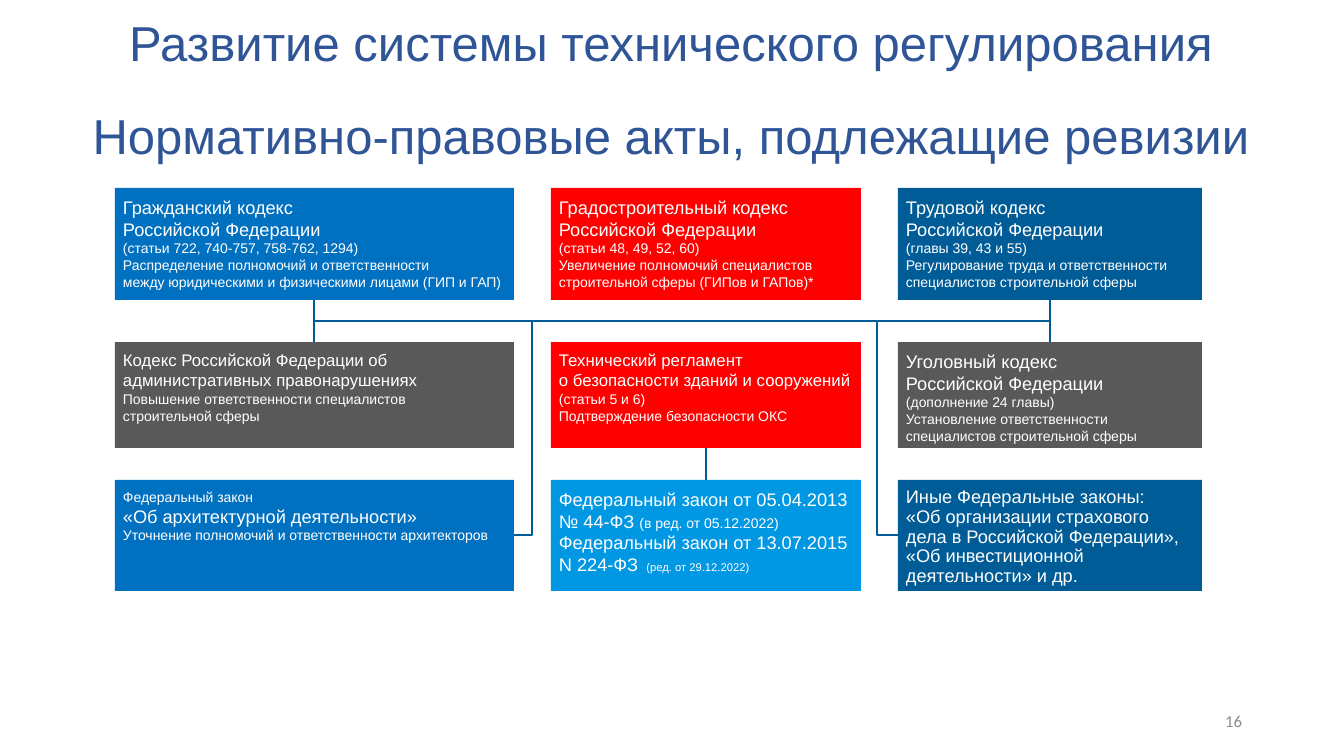
"""Build the slide on legal acts subject to revision."""
from lxml.etree import SubElement
from pptx import Presentation
from pptx.dml.color import RGBColor
from pptx.enum.shapes import MSO_CONNECTOR as CONN, MSO_SHAPE as SHAPE
from pptx.enum.text import MSO_ANCHOR as ANCHOR, PP_ALIGN as ALIGN
from pptx.oxml.ns import qn
from pptx.util import Pt

PX = 914400 / 100.8
WHITE = RGBColor(0xFF, 0xFF, 0xFF)
NAVY = RGBColor(0x00, 0x5C, 0x97)
BLUE = RGBColor(0x00, 0x70, 0xC0)
SKY = RGBColor(0x00, 0x97, 0xE3)
RED = RGBColor(0xFF, 0x00, 0x00)
DARK = RGBColor(0x59, 0x59, 0x59)
TITLE = RGBColor(0x2F, 0x55, 0x97)
GRAY = RGBColor(0x8C, 0x8C, 0x8C)

COLS = [(115, 399), (551, 310), (898, 304)]
ROWS = [(188, 112), (342, 106), (480, 111)]
BUS_Y, BRANCH_Y = 321, 535
LEFT_X, MID_X, RIGHT_X = 314, 706, 1050
LINES = [
    (LEFT_X, BUS_Y, RIGHT_X, BUS_Y),
    (LEFT_X, 300, LEFT_X, 448),
    (RIGHT_X, 300, RIGHT_X, 342),
    (MID_X, 411, MID_X, 548),
]
BRANCHES = [(532, 514), (877, 898)]

ACTS = [
    [
        (BLUE, [
            [("Гражданский кодекс \nРоссийской Федерации", 13)],
            [("(статьи 722, 740-757, 758-762, 1294)", 10)],
            [("Распределение полномочий и ответственности \n"
              "между юридическими и физическими лицами (ГИП и ГАП)", 10)],
        ], {}),
        (RED, [
            [("Градостроительный кодекс Российской Федерации", 13)],
            [("(статьи 48, 49, 52, 60)", 10)],
            [("Увеличение полномочий специалистов "
              "строительной сферы (ГИПов и ГАПов)*", 10)],
        ], {}),
        (NAVY, [
            [("Трудовой кодекс", 13)],
            [("Российской Федерации", 13)],
            [("(главы 39, 43 и 55)", 10)],
            [("Регулирование труда и ответственности "
              "специалистов строительной сферы", 10)],
        ], {}),
    ],
    [
        (DARK, [
            [("Кодекс Российской Федерации об административных правонарушениях", 12)],
            [("Повышение ответственности специалистов \nстроительной сферы", 10)],
        ], {}),
        (RED, [
            [("Технический регламент", 12)],
            [("о безопасности зданий и сооружений", 12)],
            [("(статьи 5 и 6)", 10)],
            [("Подтверждение безопасности ОКС", 10)],
        ], {}),
        (DARK, [
            [("Уголовный кодекс", 13)],
            [("Российской Федерации", 13)],
            [("(дополнение 24 главы)", 10)],
            [("Установление ответственности "
              "специалистов строительной сферы", 10)],
        ], {}),
    ],
    [
        (BLUE, [
            [("Федеральный закон", 10)],
            [("«Об архитектурной деятельности»", 13)],
            [("Уточнение полномочий и ответственности архитекторов", 10)],
        ], {}),
        (SKY, [
            [("Федеральный закон от 05.04.2013 \n№ 44-ФЗ ", 13),
             ("(в ред. от 05.12.2022)", 10)],
            [("Федеральный закон от 13.07.2015 \nN 224-ФЗ ", 13),
             (" (ред. от 29.12.2022)", 8)],
        ], {}),
        (NAVY, [
            [("Иные Федеральные законы:", 13)],
            [("«Об организации страхового \nдела в Российской Федерации», \n"
              "«Об инвестиционной деятельности» и др.", 13)],
        ], {"line_spacing": Pt(14)}),
    ],
]


def px(n):
    """Turn pixels into EMU."""
    return round(n * PX)


def apply(obj, values):
    """Set each named attribute on the object."""
    for name, value in values.items():
        setattr(obj, name, value)


def write(tf, paras, color, font="Arial", **fmt):
    """Fill a text frame with paragraphs of (text, size) runs."""
    for i, runs in enumerate(paras):
        p = tf.add_paragraph() if i else tf.paragraphs[0]
        apply(p, fmt)
        for text, size in runs:
            for j, part in enumerate(text.split("\n")):
                if j:
                    p.add_line_break()
                r = p.add_run()
                r.text = part
                apply(r.font, {"name": font, "size": Pt(size)})
                r.font.color.rgb = color


def add_act(slide, box, fill, paras, fmt):
    """Add a filled rectangle describing one legal act."""
    sp = slide.shapes.add_shape(SHAPE.RECTANGLE, *map(px, box))
    sp.shadow.inherit = False
    sp.fill.solid()
    sp.fill.fore_color.rgb = fill
    sp.line.fill.background()
    margins = {f"margin_{side}": px(8) for side in ("left", "top", "right", "bottom")}
    apply(sp.text_frame, {"word_wrap": True, "vertical_anchor": ANCHOR.TOP, **margins})
    write(sp.text_frame, paras, WHITE, alignment=ALIGN.LEFT, **fmt)


def add_line(slide, ends, kind=CONN.STRAIGHT):
    """Add a connector between two points."""
    cx = slide.shapes.add_connector(kind, *map(px, ends))
    cx.line.color.rgb = NAVY
    cx.line.width = Pt(1.5)
    SubElement(cx._element.spPr, qn("a:effectLst"))
    return cx


def add_branch(slide, x, end_x):
    """Add a one-bend connector going down from the bus, then sideways."""
    length, reach = BRANCH_Y - BUS_Y, abs(end_x - x)
    left = (x + end_x - length) / 2
    top = (BUS_Y + BRANCH_Y - reach) / 2
    start, stop, turn = left, left + length, 90
    if end_x > x:
        start, stop, turn = stop, start, 270
    cx = add_line(slide, (start, top, stop, top + reach), CONN.ELBOW)
    cx._element.spPr.find(qn("a:prstGeom")).set("prst", "bentConnector2")
    cx._element.spPr.find(qn("a:xfrm")).set("rot", str(turn * 60000))


def add_text(slide, box, anchor):
    """Add a wrapping text box and return its text frame."""
    tf = slide.shapes.add_textbox(*map(px, box)).text_frame
    apply(tf, {"word_wrap": True, "vertical_anchor": anchor})
    return tf


def main():
    """Build and save the slide."""
    prs = Presentation()
    apply(prs, {"slide_width": px(1344), "slide_height": px(756)})
    slide = prs.slides.add_slide(prs.slide_layouts[6])
    for ends in LINES:
        add_line(slide, ends)
    for (y, h), acts in zip(ROWS, ACTS):
        for (x, w), act in zip(COLS, acts):
            add_act(slide, (x, y, w, h), *act)
    for branch in BRANCHES:
        add_branch(slide, *branch)
    tf = add_text(slide, (31, 8, 1281, 163), ANCHOR.TOP)
    write(tf, [[("Развитие системы технического регулирования", 35)],
               [("Нормативно-правовые акты, подлежащие ревизии", 35)]],
          TITLE, alignment=ALIGN.CENTER)
    tf.paragraphs[1].space_before = Pt(24)
    tf = add_text(slide, (950, 701, 302, 40), ANCHOR.MIDDLE)
    write(tf, [[("16", 12)]], GRAY, "Calibri", alignment=ALIGN.RIGHT)
    prs.save("out.pptx")


if __name__ == "__main__":
    main()
